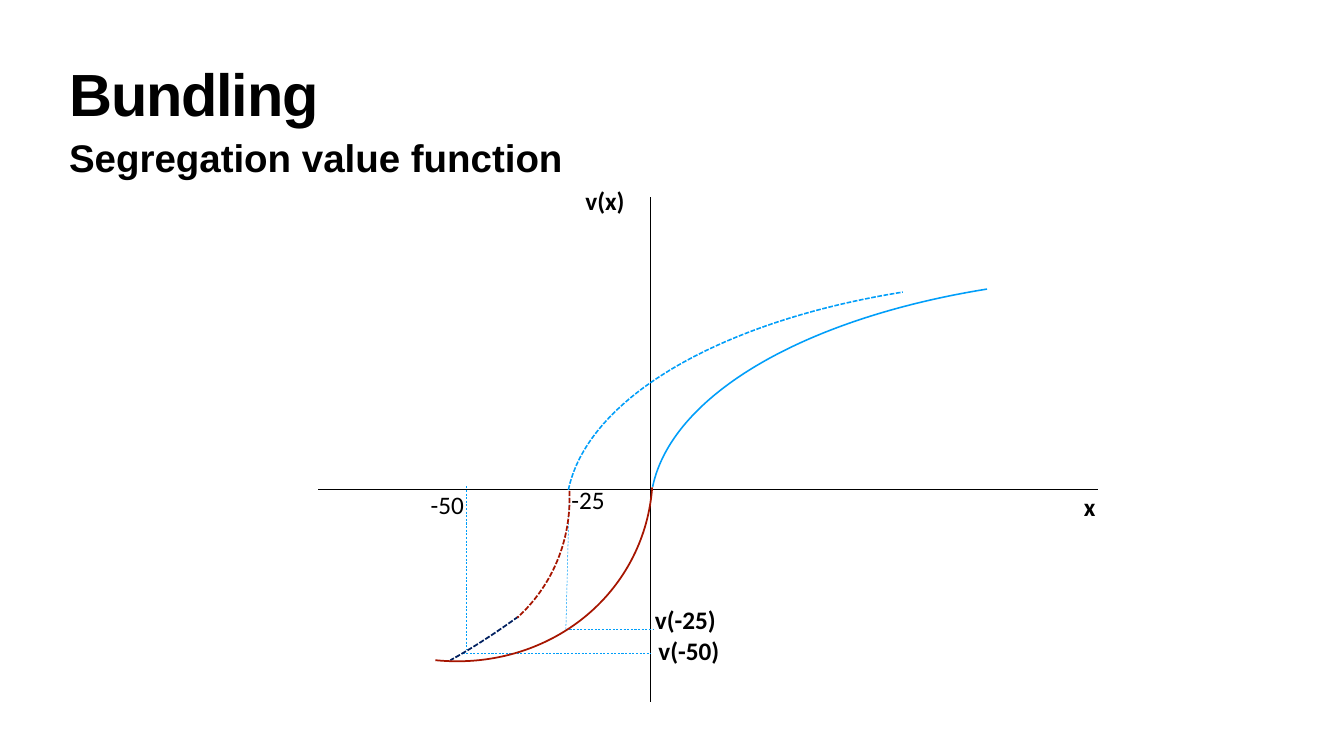
import lxml.etree
import pptx
import pptx.dml.color
import pptx.enum.dml
import pptx.enum.shapes
import pptx.enum.text
import pptx.oxml.ns
import pptx.util

Pt = pptx.util.Pt
DASH = pptx.enum.dml.MSO_LINE.DASH
SHORT_DASH = pptx.enum.dml.MSO_LINE.SQUARE_DOT
BLACK, BLUE, RED, NAVY = "000000", "009EF9", "A61500", "002060"


def colour(value):
    return pptx.dml.color.RGBColor.from_string(value)


def apply_format(target, values):
    for name, value in values.items():
        setattr(target, name, value)


def write_text(shape, text, font, inset=None, wrap=True):
    """Put one formatted line of text in a shape."""
    frame = shape.text_frame
    apply_format(frame, {
        "word_wrap": wrap,
        "auto_size": pptx.enum.text.MSO_AUTO_SIZE.NONE,
        "vertical_anchor": pptx.enum.text.MSO_ANCHOR.TOP,
    })
    if inset is not None:
        sides = ("left", "top", "right", "bottom")
        apply_format(frame, {f"margin_{side}": Pt(inset) for side in sides})
    para = frame.paragraphs[0]
    para.alignment = pptx.enum.text.PP_ALIGN.LEFT
    span = para.add_run()
    span.text = text
    apply_format(span.font, font)
    span.font.color.rgb = colour(BLACK)
    return para, span


def format_line(line, value, width, dash=None):
    line.color.rgb = colour(value)
    apply_format(line, {"width": Pt(width), "dash_style": dash})


def add_heading(page, box):
    """Title with a subtitle below it."""
    left, top, width, height = box
    title = page.shapes.title
    apply_format(title, {"left": Pt(left), "top": Pt(top),
                         "width": Pt(width), "height": Pt(113)})
    para, span = write_text(
        title, "Bundling", {"name": "Arial", "size": Pt(85), "bold": True}, 4)
    title.text_frame.vertical_anchor = pptx.enum.text.MSO_ANCHOR.MIDDLE
    para.line_spacing = 0.8
    span.font._element.set("spc", "-170")

    subtitle = page.shapes.add_textbox(
        Pt(left), Pt(top + height - 73.5), Pt(width), Pt(73.5))
    write_text(subtitle, "Segregation value function",
               {"name": "Arial", "size": Pt(55), "bold": True}, 3.6)


def add_value_curves(page, box):
    """Axes, guide lines, curves and labels of the value function."""
    left, top, width, height = box
    axis_x, axis_y = 475.5, 438.4
    level_25, level_50 = 639.3, 673.8

    # Axes and guides: start, end, colour, dash
    lines = [
        ((axis_x, 21.5), (axis_x, height), BLACK, None),
        ((width, axis_y), (0, axis_y), BLACK, None),
        ((207, level_50), (axis_x, level_50), BLUE, DASH),
        ((212.7, 434.8), (212.7, 668.1), BLUE, DASH),
        ((354.6, level_25), (359.6, 441.3), BLUE, DASH),
        ((354.6, level_25), (480.6, level_25), BLUE, DASH),
    ]
    for start, end, value, dash in lines:
        connector = page.shapes.add_connector(
            pptx.enum.shapes.MSO_CONNECTOR.STRAIGHT,
            Pt(left + start[0]), Pt(top + start[1]),
            Pt(left + end[0]), Pt(top + end[1]))
        format_line(connector.line, value, 0.75, dash)
        lxml.etree.SubElement(connector._element.spPr,
                              pptx.oxml.ns.qn("a:effectLst"))

    # Curves: place, size, rotation, arc start and end, colour, width, dash
    gain_size, gain_arc = (665.3, 1424.9), (163.56, 194.2)
    curves = [
        ((85.3, 568), (368.6, 58.3), 144.1, (162, 209.31), NAVY, 2.5, SHORT_DASH),
        ((855, -244.9), gain_size, 270, gain_arc, BLUE, 2.25, None),
        ((-96.2, 102.2), (558.7, 598.3), 116.3, (150.28, 202.06), RED, 2.5, None),
        ((734.7, -240.6), gain_size, 270, gain_arc, BLUE, 2.25, SHORT_DASH),
        ((-253.1, 56.1), (558.7, 691.2), 116.3, (150.28, 170.49), RED, 2.5,
         SHORT_DASH),
    ]
    for (x, y), size, rotation, ends, value, weight, dash in curves:
        arc = page.shapes.add_shape(
            pptx.enum.shapes.MSO_SHAPE.ARC,
            Pt(left + x), Pt(top + y), Pt(size[0]), Pt(size[1]))
        arc.rotation = rotation
        arc.shadow.inherit = False
        arc.fill.background()
        arc.adjustments[0], arc.adjustments[1] = ends
        format_line(arc.line, value, weight, dash)

    # Labels: text, place, width, bold
    labels = [
        ("v(x)", 375.4, 0.6, 71.3, True),
        ("x", 1087.5, axis_y, 31, True),
        ("-25", 355.3, 428.3, 90.7, False),
        ("-50", 154.4, 434.8, 90.7, False),
        ("v(-25)", 474.8, 600.4, 102.2, True),
        ("v(-50)", 479.8, 644.3, 102.2, True),
    ]
    for text, x, y, label_width, bold in labels:
        label = page.shapes.add_textbox(
            Pt(left + x), Pt(top + y), Pt(label_width), Pt(51.1))
        write_text(label, text,
                   {"name": "Calibri", "size": Pt(36), "bold": bold},
                   wrap=not bold)


def main():
    deck = pptx.Presentation()
    apply_format(deck, {"slide_width": Pt(1920), "slide_height": Pt(1080)})
    page = deck.slides.add_slide(deck.slide_layouts.get_by_name("Title Only"))
    add_heading(page, (95, 85, 1730, 175.7))
    add_value_curves(page, (453.8, 260, 1114.4, 742.2))
    deck.save("out.pptx")


if __name__ == "__main__":
    main()
